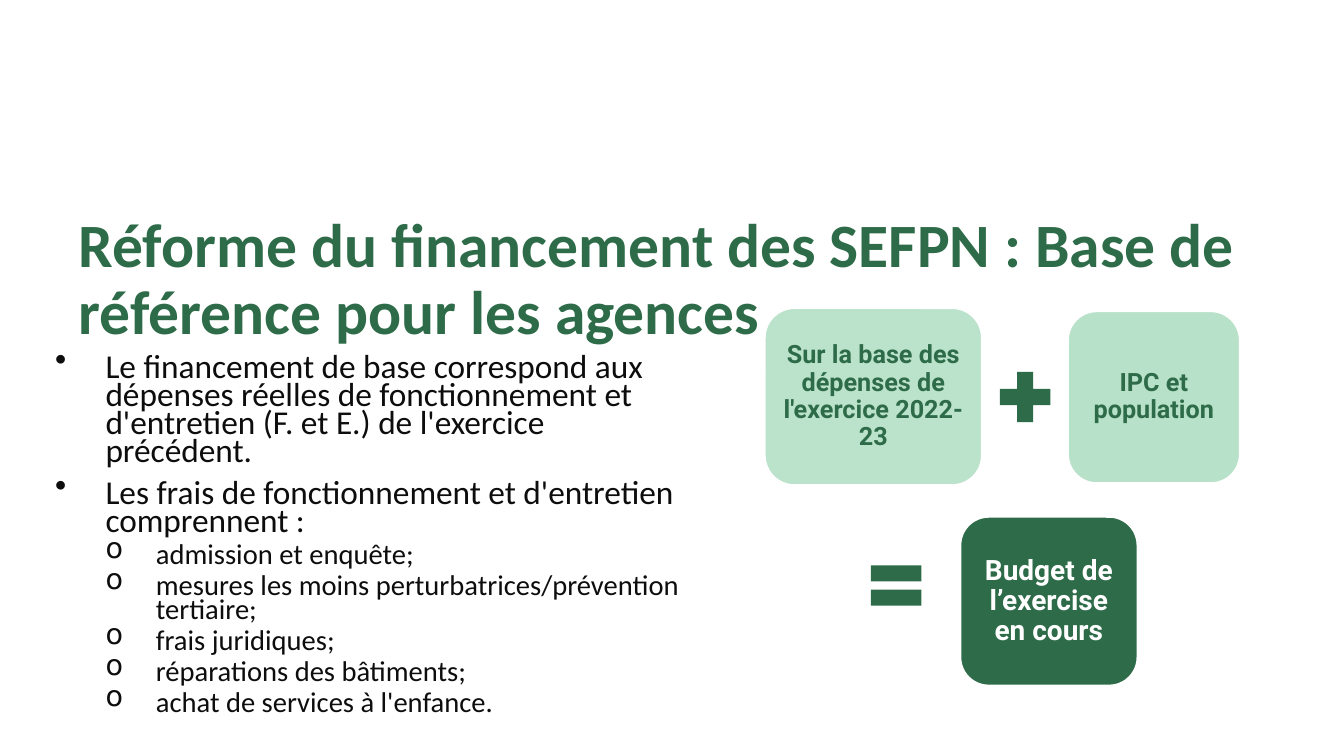
from lxml import etree
from pptx import Presentation
from pptx.dml.color import RGBColor
from pptx.enum.shapes import MSO_SHAPE
from pptx.enum.text import MSO_ANCHOR, PP_ALIGN
from pptx.oxml.ns import qn
from pptx.util import Cm, Pt

ROUND = MSO_SHAPE.ROUNDED_RECTANGLE
PLUS = MSO_SHAPE.MATH_PLUS
EQUAL = MSO_SHAPE.MATH_EQUAL
MIDDLE = MSO_ANCHOR.MIDDLE
CENTER = PP_ALIGN.CENTER

COLORS = {"green": "2E6C49", "mint": "78C699", "ink": "0D0D0D", "white": "FFFFFF"}


def color(name):
    return RGBColor.from_string(COLORS[name])


def write(para, text, font, size, tint, bold):
    run = para.add_run()
    run.text = text
    look = {"name": font, "size": Pt(size), "bold": bold}
    for key, value in look.items():
        setattr(run.font, key, value)
    run.font.color.rgb = color(tint)


prs = Presentation()
prs.slide_width, prs.slide_height = Cm(33.87), Cm(19.05)
slide = prs.slides.add_slide(prs.slide_layouts[6])
shapes = slide.shapes

# Title
title = shapes.add_textbox(Cm(1.73), Cm(5.28), Cm(30.4), Cm(1.6)).text_frame
title.word_wrap = True
head = title.paragraphs[0]
head.line_spacing = 0.9
write(head, "Réforme du financement des SEFPN : Base de référence pour les agences",
      "Calibri", 44, "green", True)

# Bullet list: level, text
points = [
    (0, "Le financement de base correspond aux dépenses réelles de fonctionnement "
        "et d'entretien (F. et E.) de l'exercice précédent."),
    (0, "Les frais de fonctionnement et d'entretien comprennent :"),
    (1, "admission et enquête;"),
    (1, "mesures les moins perturbatrices/prévention tertiaire;"),
    (1, "frais juridiques;"),
    (1, "réparations des bâtiments;"),
    (1, "achat de services à l'enfance."),
]
levels = [("•", 23.8, 10), ("o", 20.4, 5)]

body = shapes.add_textbox(Cm(1.14), Cm(8.84), Cm(16.28), Cm(9.5)).text_frame
body.word_wrap = True
for i, (level, text) in enumerate(points):
    mark, size, gap = levels[level]
    para = body.add_paragraph() if i else body.paragraphs[0]
    props = para._p.get_or_add_pPr()
    props.set("marL", str(Cm(1.27) * (level + 1)))
    props.set("indent", str(-Cm(1.27)))
    etree.SubElement(props, qn("a:buChar"), char=mark)
    para.level = level
    para.line_spacing = 0.7
    if i:
        para.space_before = Pt(gap)
    write(para, text, "Calibri", size, "ink", False)

# Budget equation: text, place, fill, opacity in percent, text colour, text size
terms = [
    ("Sur la base des dépenses de l'exercice 2022-23",
     (19.28, 7.77, 5.46, 4.45), "mint", 50, "green", 18),
    ("IPC et population", (26.92, 7.85, 4.32, 4.32), "mint", 52, "green", 18),
    ("Budget de l’exercise en cours",
     (24.21, 13.03, 4.45, 4.24), "green", 100, "white", 20),
]
for text, place, fill, alpha, tint, size in terms:
    box = shapes.add_shape(ROUND, *map(Cm, place))
    box.shadow.inherit = False
    box.fill.solid()
    box.fill.fore_color.rgb = color(fill)
    if alpha < 100:
        tone = box._element.spPr.find(qn("a:solidFill"))[0]
        etree.SubElement(tone, qn("a:alpha"), val=str(alpha * 1000))
    box.line.color.rgb = color("white")
    box.line.width = Pt(1)
    frame = box.text_frame
    frame.word_wrap = True
    frame.vertical_anchor = MIDDLE
    for side in ("left", "top", "right", "bottom"):
        setattr(frame, f"margin_{side}", Cm(0.08))
    para = frame.paragraphs[0]
    para.alignment = CENTER
    para.line_spacing = 0.9
    write(para, text, "Roboto", size, tint, True)

for kind, left, top in [(PLUS, 24.97, 9.14), (EQUAL, 21.72, 13.89)]:
    sign = shapes.add_shape(kind, Cm(left), Cm(top), Cm(1.73), Cm(1.73))
    sign.shadow.inherit = False
    sign.fill.solid()
    sign.fill.fore_color.rgb = color("green")
    sign.line.fill.background()

prs.save("out.pptx")
